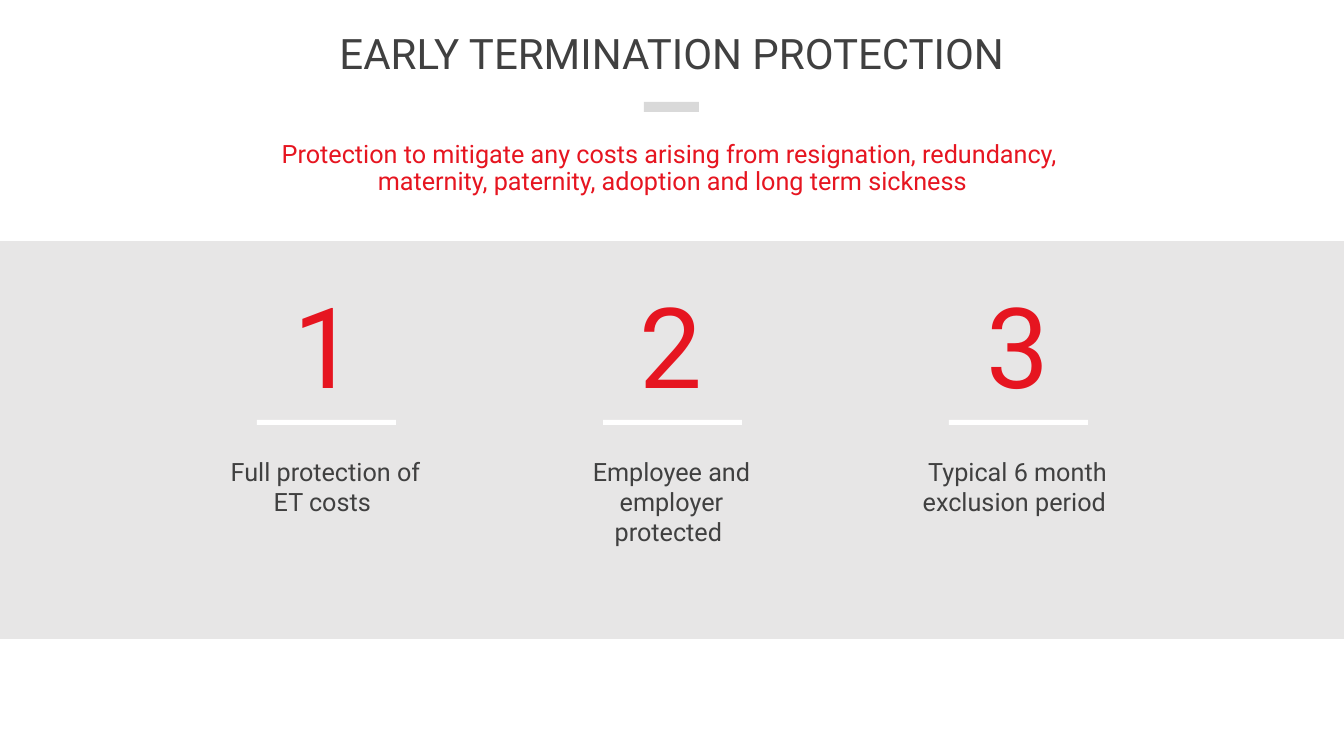
from pptx import Presentation
from pptx.dml.color import RGBColor
from pptx.enum.shapes import MSO_SHAPE
from pptx.enum.text import MSO_ANCHOR, MSO_AUTO_SIZE, PP_ALIGN
from pptx.util import Pt

RECTANGLE = MSO_SHAPE.RECTANGLE
CENTER = PP_ALIGN.CENTER
TOP, MIDDLE = MSO_ANCHOR.TOP, MSO_ANCHOR.MIDDLE
NO_FIT, GROW = MSO_AUTO_SIZE.NONE, MSO_AUTO_SIZE.SHAPE_TO_FIT_TEXT

EMU_PER_INCH = 914400
PX_PER_INCH = 100.8
SLIDE_W, SLIDE_H = 1344, 756
FONT = "Roboto"
COLORS = {
    "text": "404040",
    "accent": "E61520",
    "dash": "D9D9D9",
    "band": "E7E6E6",
    "rule": "FFFFFF",
}

TITLE = "EARLY TERMINATION PROTECTION"
SUMMARY = [
    "Protection to mitigate any costs arising from resignation, redundancy, ",
    "maternity, paternity, adoption and long term sickness",
]
# Each benefit: wording and height of its label
BENEFITS = [
    ("Full protection of ET costs ", 72),
    ("Employee and employer protected ", 102),
    ("Typical 6 month exclusion period ", 72),
]
BENEFIT_PITCH = 346


def px(length):
    return round(length * EMU_PER_INCH / PX_PER_INCH)


def color(name):
    return RGBColor.from_string(COLORS[name])


def add_bar(shapes, left, top, width, height, fill):
    bar = shapes.add_shape(RECTANGLE, px(left), px(top), px(width), px(height))
    bar.shadow.inherit = False
    bar.fill.solid()
    bar.fill.fore_color.rgb = color(fill)
    bar.line.fill.background()


def write_centered(frame, lines, size, ink, anchor=TOP, fit=GROW):
    """Fill a text frame with one centred paragraph and return that paragraph."""
    frame.word_wrap = True
    frame.auto_size = fit
    frame.vertical_anchor = anchor
    paragraph = frame.paragraphs[0]
    paragraph.alignment = CENTER
    for index, line in enumerate(lines):
        if index:
            paragraph.add_line_break()
        run = paragraph.add_run()
        run.text = line
        run.font.name = FONT
        run.font.size = Pt(size)
        run.font.color.rgb = color(ink)
    return paragraph


def add_text(shapes, left, top, width, height, lines, size, ink, anchor=TOP, fit=GROW):
    box = shapes.add_textbox(px(left), px(top), px(width), px(height))
    return write_centered(box.text_frame, lines, size, ink, anchor, fit)


def add_heading(slide, left, top, width):
    title = slide.shapes.title
    title.left, title.top = px(left), px(top)
    title.width, title.height = px(width), px(115)
    heading = write_centered(title.text_frame, [TITLE], 30, "text", MIDDLE, NO_FIT)
    heading.line_spacing = 0.8
    add_bar(slide.shapes, left + 644, top + 102, 55, 10, "dash")


def add_summary(slide, left, top, width, height):
    summary = add_text(slide.shapes, left, top, width, height,
                       SUMMARY, 18, "accent", fit=NO_FIT)
    summary.line_spacing = 0.9
    summary.space_before = Pt(10)


def add_benefit(slide, left, top, number, label, label_height):
    shapes = slide.shapes.add_group_shape().shapes
    add_text(shapes, left + 51, top, 113, 146, [str(number)], 80, "accent", MIDDLE)
    add_bar(shapes, left + 39, top + 149, 139, 5, "rule")
    add_text(shapes, left, top + 180, 215, label_height, [label], 18, "text")


def add_benefit_band(slide, left, top, width, height):
    add_bar(slide.shapes, left, top, width, height, "band")
    for index, (label, label_height) in enumerate(BENEFITS):
        add_benefit(slide, left + 218 + index * BENEFIT_PITCH, top + 30,
                    index + 1, label, label_height)


def main():
    deck = Presentation()
    deck.slide_width, deck.slide_height = px(SLIDE_W), px(SLIDE_H)
    title_only = deck.slide_layouts[5]
    slide = deck.slides.add_slide(title_only)
    add_heading(slide, 0, 0, SLIDE_W)
    add_benefit_band(slide, 0, 241, SLIDE_W, 398)
    add_summary(slide, 93, 137, 1159, 489)
    deck.save("out.pptx")


if __name__ == "__main__":
    main()
